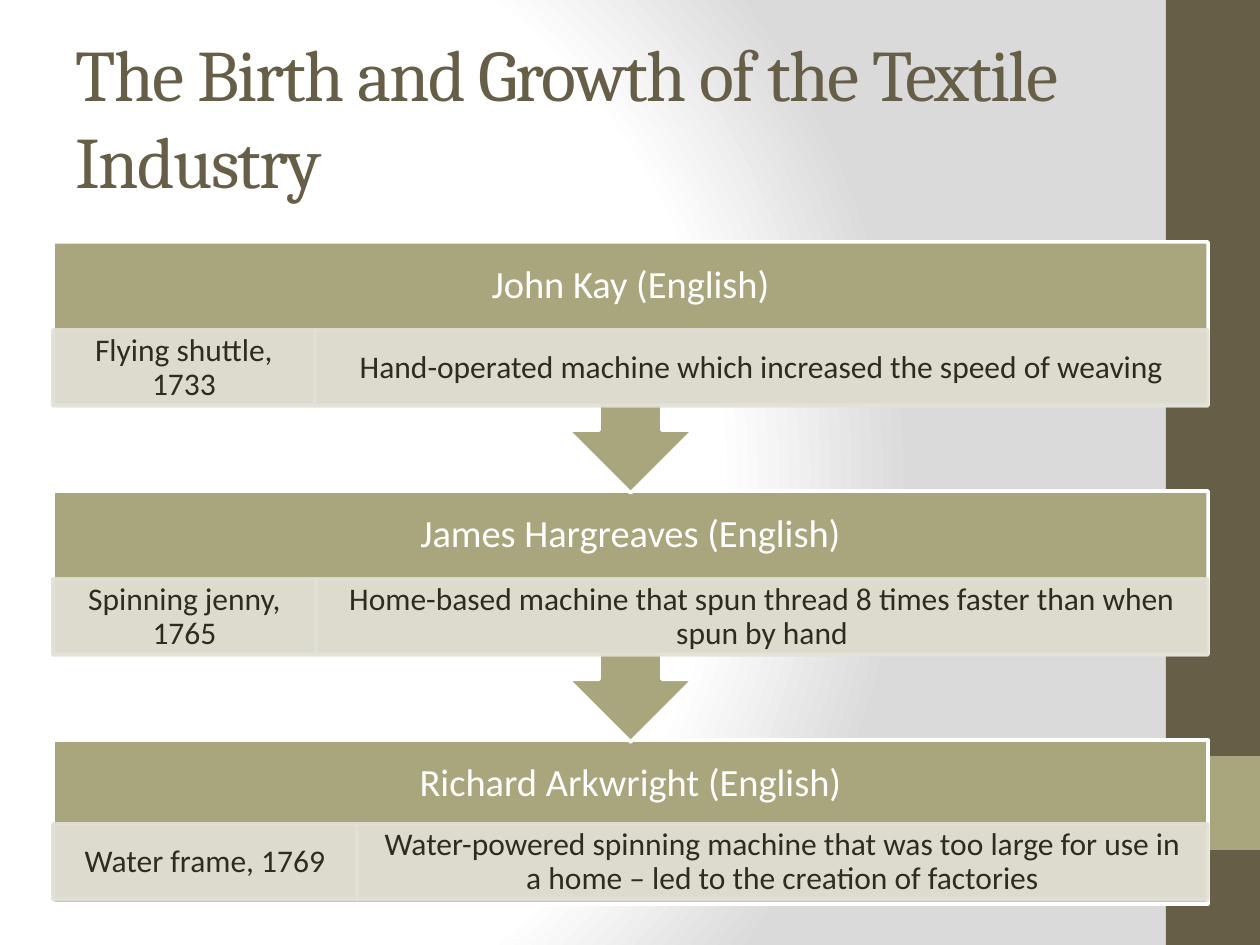
from lxml import etree
from pptx import Presentation
from pptx.dml.color import RGBColor
from pptx.enum.shapes import MSO_SHAPE as SHAPE
from pptx.enum.text import MSO_ANCHOR as ANCHOR, MSO_AUTO_SIZE as FIT, PP_ALIGN as ALIGN
from pptx.oxml import parse_xml
from pptx.oxml.ns import nsdecls, qn
from pptx.util import Pt

PX = 914400 / 126
BROWN = RGBColor(0x67, 0x5E, 0x47)
OLIVE = RGBColor(0xA9, 0xA5, 0x7C)
PALE = RGBColor(0xE2, 0xE1, 0xD7)
INK = RGBColor(0x2F, 0x2B, 0x20)
WHITE = RGBColor(0xFF, 0xFF, 0xFF)

LEFT, WIDTH, TOP, PITCH = 53, 1155, 242, 249
HEAD_H, CELL_H = 88, 76
INVENTORS = [
    ("John Kay (English)", "Flying shuttle, 1733",
     "Hand-operated machine which increased the speed of weaving", 262, 88),
    ("James Hargreaves (English)", "Spinning jenny, 1765",
     "Home-based machine that spun thread 8 times faster than when spun by hand", 263, 88),
    ("Richard Arkwright (English)", "Water frame, 1769",
     "Water-powered spinning machine that was too large for use in a home – led to the creation of factories",
     304, 84),
]


def add_box(kind, box, fill, line=None, alpha=None):
    sp = s.shapes.add_shape(kind, *[round(v * PX) for v in box])
    sp.shadow.inherit = False
    sp.fill.solid()
    sp.fill.fore_color.rgb = fill
    if line is None:
        sp.line.fill.background()
    else:
        sp.line.color.rgb = line
        sp.line.width = Pt(2)
    if alpha:
        for clr in sp._element.spPr.iter(qn("a:srgbClr")):
            etree.SubElement(clr, qn("a:alpha")).set("val", str(alpha * 1000))
    return sp


def write(sp, text, size, color, inset_x, inset_y):
    tf = sp.text_frame
    fmt = {"word_wrap": True, "vertical_anchor": ANCHOR.MIDDLE,
           "margin_left": round(inset_x * PX), "margin_right": round(inset_x * PX),
           "margin_top": round(inset_y * PX), "margin_bottom": round(inset_y * PX)}
    for name, value in fmt.items():
        setattr(tf, name, value)
    p = tf.paragraphs[0]
    p.alignment = ALIGN.CENTER
    p.line_spacing = 0.9
    r = p.add_run()
    r.text = text
    r.font.color.rgb = color
    for name, value in {"name": "Calibri", "size": Pt(size)}.items():
        setattr(r.font, name, value)


prs = Presentation()
prs.slide_width, prs.slide_height = round(1260 * PX), round(945 * PX)
s = prs.slides.add_slide(prs.slide_layouts[5])

s.background.fill.solid()
solid = s.background._cSld.find(".//" + qn("a:solidFill"))
stops = "".join(f'<a:gs pos="{pos}"><a:srgbClr val="{clr}"/></a:gs>'
                for pos, clr in [(0, "FFFFFF"), (75000, "FFFFFF"), (100000, "DADADA")])
solid.getparent().replace(solid, parse_xml(
    f'<a:gradFill {nsdecls("a")} rotWithShape="1"><a:gsLst>{stops}</a:gsLst>'
    '<a:path path="circle"><a:fillToRect l="20000" t="50000" r="100000" b="50000"/></a:path>'
    '</a:gradFill>'))

add_box(SHAPE.RECTANGLE, (1166, 0, 94, 945), BROWN)
add_box(SHAPE.RECTANGLE, (1166, 756, 94, 94), OLIVE)

title = s.shapes.title
for name, value in {"left": 63, "top": 38, "width": 1050, "height": 157}.items():
    setattr(title, name, round(value * PX))
tf = title.text_frame
for name, value in {"auto_size": FIT.NONE, "word_wrap": True, "vertical_anchor": ANCHOR.MIDDLE}.items():
    setattr(tf, name, value)
p = tf.paragraphs[0]
p.alignment = ALIGN.LEFT
r = p.add_run()
r.text = "The Birth and Growth of the Textile Industry"
r.font.color.rgb = BROWN
for name, value in {"name": "Cambria", "size": Pt(41.4)}.items():
    setattr(r.font, name, value)
r.font._element.set("spc", "-100")

for i, (inventor, invention, effect, split, cell_dy) in reversed(list(enumerate(INVENTORS))):
    y = TOP + i * PITCH
    if i == len(INVENTORS) - 1:
        add_box(SHAPE.RECTANGLE, (LEFT, y, WIDTH, 164), OLIVE, WHITE)
    else:
        add_box(SHAPE.UP_ARROW_CALLOUT, (LEFT, y, WIDTH, 251), OLIVE, WHITE).rotation = 180
    head = s.shapes.add_textbox(*[round(v * PX) for v in (LEFT, y, WIDTH, HEAD_H)])
    write(head, inventor, 22, WHITE, 21, 21)
    for text, x, w in [(invention, LEFT, split), (effect, LEFT + split, WIDTH - split)]:
        cell = add_box(SHAPE.RECTANGLE, (x, y + cell_dy, w, CELL_H), PALE, PALE, 90)
        write(cell, text, 18, INK, 18, 4)

prs.save("out.pptx")
